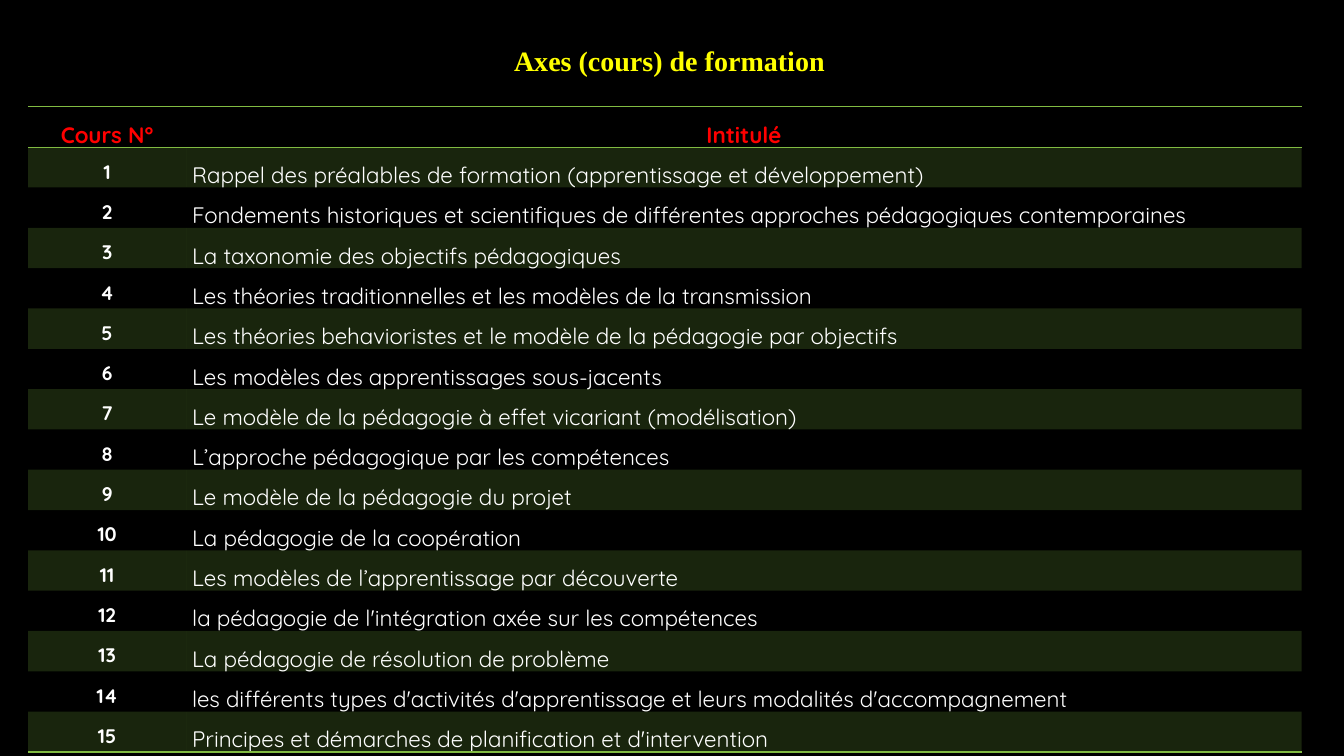
from lxml.etree import SubElement
from pptx import Presentation
from pptx.dml.color import RGBColor
from pptx.enum.text import MSO_ANCHOR, PP_ALIGN
from pptx.oxml import parse_xml
from pptx.oxml.ns import nsdecls, qn
from pptx.util import Inches, Pt

BLACK = RGBColor(0x00, 0x00, 0x00)
WHITE = RGBColor(0xFF, 0xFF, 0xFF)
YELLOW = RGBColor(0xFF, 0xFF, 0x00)
RED = RGBColor(0xFF, 0x00, 0x00)
GREEN = RGBColor(0x81, 0xBB, 0x42)

NO_GRID_STYLE = "{2D5ABB26-0587-4C30-8999-92F81FD0307C}"
NUMBER_SHARE = 0.124
ROW_HEIGHT = 0.4

HEADINGS = ("Cours N°", "Intitulé")
COURSES = [
    "Rappel des préalables de formation (apprentissage et développement)",
    "Fondements historiques et scientifiques de différentes approches pédagogiques contemporaines",
    "La taxonomie des objectifs pédagogiques",
    "Les théories traditionnelles et les modèles de la transmission",
    "Les théories behavioristes et le modèle de la pédagogie par objectifs",
    "Les modèles des apprentissages sous-jacents",
    "Le modèle de la pédagogie à effet vicariant (modélisation)",
    "L’approche pédagogique par les compétences",
    "Le modèle de la pédagogie du projet",
    "La pédagogie de la coopération",
    "Les modèles de l’apprentissage par découverte",
    "la pédagogie de l'intégration axée sur les compétences",
    "La pédagogie de résolution de problème",
    "les différents types d'activités d'apprentissage et leurs modalités d'accompagnement",
    "Principes et démarches de planification et d'intervention",
]


def style_text(paragraph, font_name, size, color, bold, align):
    paragraph.alignment = align
    paragraph.font.name = font_name
    paragraph.font.size = Pt(size)
    paragraph.font.color.rgb = color
    paragraph.font.bold = bold


def add_rules(cell, sides):
    properties = cell._tc.get_or_add_tcPr()
    for position, side in enumerate(sides):
        rule = parse_xml(
            f'<a:ln{side} {nsdecls("a")} w="{Pt(1)}"><a:solidFill>'
            f'<a:srgbClr val="{GREEN}"/></a:solidFill></a:ln{side}>'
        )
        properties.insert(position, rule)


def fill_cell(cell, banded):
    if not banded:
        cell.fill.background()
        return
    cell.fill.solid()
    cell.fill.fore_color.rgb = GREEN
    band_color = cell._tc.tcPr.find(".//" + qn("a:srgbClr"))
    SubElement(band_color, qn("a:alpha"), val="20000")


def write_cell(cell, text, size, color, bold, align):
    cell.margin_left = cell.margin_right = Inches(0.06)
    cell.margin_top = cell.margin_bottom = 0
    cell.vertical_anchor = MSO_ANCHOR.TOP
    paragraph = cell.text_frame.paragraphs[0]
    paragraph.text = text
    paragraph.line_spacing = 1.5
    style_text(paragraph, "Quicksand", size, color, bold, align)


def add_title(slide, left, top, width, height):
    title = slide.shapes.add_textbox(*map(Inches, (left, top, width, height)))
    title.text_frame.word_wrap = True
    paragraph = title.text_frame.paragraphs[0]
    paragraph.text = "Axes (cours) de formation"
    style_text(paragraph, "Times New Roman", 20, YELLOW, True, PP_ALIGN.CENTER)


def add_courses(slide, left, top, width):
    row_count = len(COURSES) + 1
    box = map(Inches, (left, top, width, row_count * ROW_HEIGHT))
    courses = slide.shapes.add_table(row_count, 2, *box).table
    courses.first_row = courses.horz_banding = False
    courses._tbl.tblPr.find(qn("a:tableStyleId")).text = NO_GRID_STYLE
    courses.columns[0].width = Inches(width * NUMBER_SHARE)
    courses.columns[1].width = Inches(width * (1 - NUMBER_SHARE))

    for column, heading in enumerate(HEADINGS):
        write_cell(courses.cell(0, column), heading, 16, RED, True, PP_ALIGN.CENTER)
    for number, course in enumerate(COURSES, start=1):
        write_cell(courses.cell(number, 0), str(number), 14, WHITE, True, PP_ALIGN.CENTER)
        write_cell(courses.cell(number, 1), course, 16, WHITE, False, PP_ALIGN.LEFT)

    rules = {0: "TB", len(COURSES): "B"}
    for number, row in enumerate(courses.rows):
        row.height = Inches(ROW_HEIGHT)
        for cell in row.cells:
            fill_cell(cell, number % 2 == 1)
            add_rules(cell, rules.get(number, ""))


def main():
    deck = Presentation()
    deck.slide_width = Inches(13.33)
    deck.slide_height = Inches(7.5)
    slide = deck.slides.add_slide(deck.slide_layouts[6])
    slide.background.fill.solid()
    slide.background.fill.fore_color.rgb = BLACK
    add_title(slide, 0.28, 0.38, 12.72, 0.44)
    add_courses(slide, 0.28, 1.06, 12.63)
    deck.save("out.pptx")


if __name__ == "__main__":
    main()
